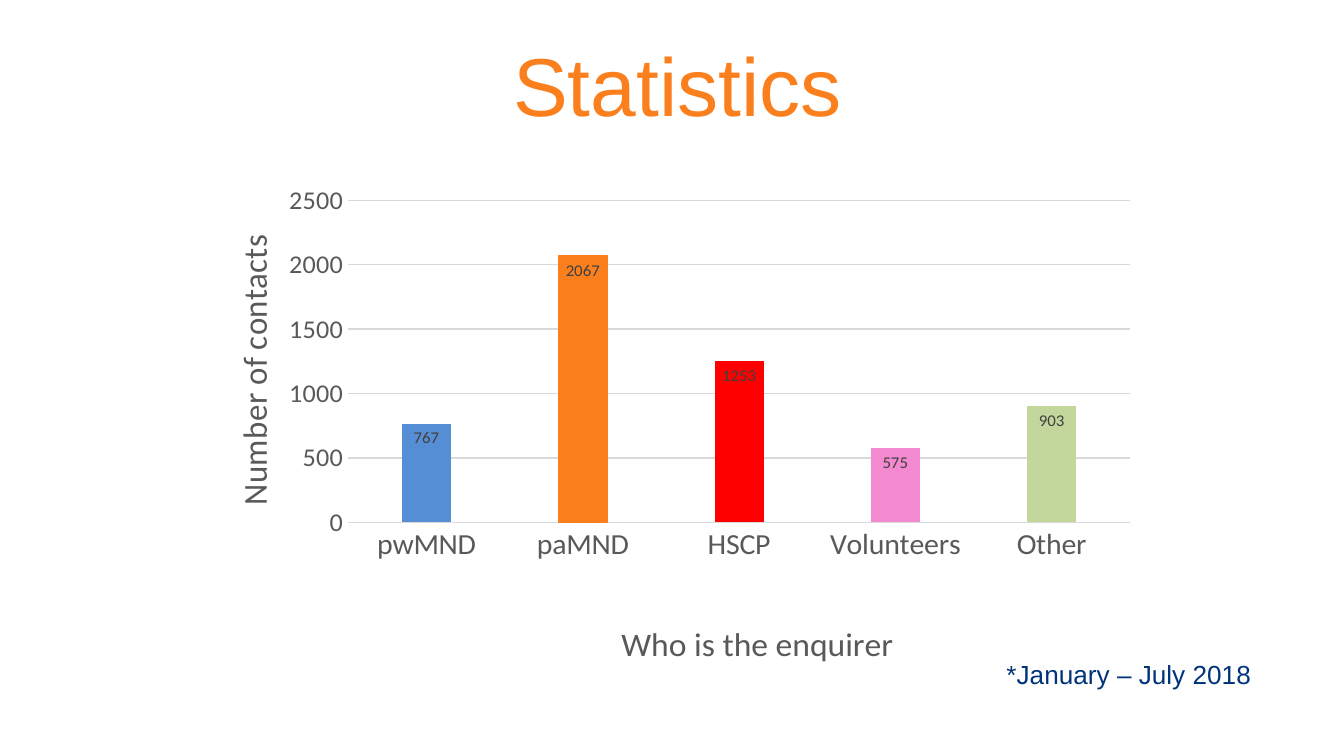
"""Build the Statistics slide with its chart of contacts by enquirer."""
from lxml.etree import SubElement
from pptx import Presentation
from pptx.chart.data import CategoryChartData
from pptx.dml.color import RGBColor
from pptx.enum.chart import XL_CHART_TYPE as ChartType
from pptx.enum.chart import XL_LABEL_POSITION as LabelPosition
from pptx.enum.chart import XL_TICK_MARK as TickMark
from pptx.enum.text import MSO_ANCHOR as Anchor
from pptx.enum.text import MSO_AUTO_SIZE as AutoSize
from pptx.enum.text import PP_ALIGN as Align
from pptx.oxml.ns import qn
from pptx.util import Pt

ORANGE = RGBColor(0xFB, 0x7F, 0x1D)
BLUE = RGBColor(0x55, 0x8E, 0xD5)
RED = RGBColor(0xFF, 0x00, 0x00)
PINK = RGBColor(0xF3, 0x89, 0xD0)
GREEN = RGBColor(0xC3, 0xD6, 0x9B)
NAVY = RGBColor(0x00, 0x34, 0x7A)
GREY = RGBColor(0x59, 0x59, 0x59)
DARK = RGBColor(0x40, 0x40, 0x40)
PALE = RGBColor(0xD9, 0xD9, 0xD9)
BLACK = RGBColor(0x00, 0x00, 0x00)

CONTACTS = [
    ("pwMND", 767, BLUE),
    ("paMND", 2067, ORANGE),
    ("HSCP", 1253, RED),
    ("Volunteers", 575, PINK),
    ("Other", 903, GREEN),
]


def set_font(font, name, size, color):
    font.name = name
    font.size = Pt(size)
    font.bold = False
    font.color.rgb = color


def set_line(line, color):
    line.color.rgb = color
    line.width = Pt(0.75)


def write(shape, text, size, color, align):
    frame = shape.text_frame
    frame.word_wrap = True
    frame.auto_size = AutoSize.NONE
    frame.vertical_anchor = Anchor.TOP
    para = frame.paragraphs[0]
    para.text = text
    para.alignment = align
    set_font(para.font, "Arial", size, color)


def place_part(part, index, **fractions):
    for old in part.findall(qn("c:layout")):
        part.remove(old)
    layout = part.makeelement(qn("c:layout"))
    part.insert(index, layout)
    manual = SubElement(layout, qn("c:manualLayout"))
    if "w" in fractions:
        SubElement(manual, qn("c:layoutTarget")).set("val", "inner")
    for mode in ("xMode", "yMode"):
        SubElement(manual, qn(f"c:{mode}")).set("val", "edge")
    for name, value in fractions.items():
        SubElement(manual, qn(f"c:{name}")).set("val", str(value))


def style_axis(axis, title, size, x, y, rotation):
    axis.major_tick_mark = axis.minor_tick_mark = TickMark.NONE
    set_font(axis.tick_labels.font, "Calibri", size, GREY)
    frame = axis.axis_title.text_frame
    frame.text = title
    set_font(frame.paragraphs[0].font, "Calibri", 18, GREY)
    body = frame._txBody.find(qn("a:bodyPr"))
    body.set("rot", str(rotation * 60000))
    body.set("vert", "horz")
    place_part(axis.axis_title._element, 1, x=x, y=y)


def style_bars(plot):
    plot.gap_width = 219
    plot.overlap = -27
    plot.vary_by_categories = False
    series = plot.series[0]
    for index, (_, _, color) in enumerate(CONTACTS):
        bar = series.points[index].format
        bar.fill.solid()
        bar.fill.fore_color.rgb = color
        if color == ORANGE:
            set_line(bar.line, ORANGE)
        else:
            bar.line.fill.background()
    labels = series.data_labels
    labels.show_value = True
    labels.position = LabelPosition.INSIDE_END
    set_font(labels.font, "Calibri", 9, DARK)


def add_contacts_chart(page):
    data = CategoryChartData()
    data.categories = [name for name, _, _ in CONTACTS]
    data.add_series("Series 1", [count for _, count, _ in CONTACTS])
    chart = page.shapes.add_chart(
        ChartType.COLUMN_CLUSTERED, Pt(105), Pt(94.3), Pt(510.5), Pt(267.1), data
    ).chart
    chart.has_legend = False
    chart.has_title = False
    set_font(chart.font, "Calibri", 10, BLACK)
    style_bars(chart.plots[0])

    enquirers, counts = chart.category_axis, chart.value_axis
    style_axis(enquirers, "Who is the enquirer", 16, 0.44, 0.9, 0)
    set_line(enquirers.format.line, PALE)
    style_axis(counts, "Number of contacts", 14, 0.03, 0.12, -90)
    counts.format.line.fill.background()
    counts.minimum_scale, counts.maximum_scale = 0, 2500
    counts.major_unit = 500
    set_line(counts.major_gridlines.format.line, PALE)
    plot_area = chart._chartSpace.find(".//" + qn("c:plotArea"))
    place_part(plot_area, 0, x=0.16, y=0.05, w=0.82, h=0.66)


def main():
    deck = Presentation()
    deck.slide_width, deck.slide_height = Pt(720), Pt(405)
    page = deck.slides.add_slide(deck.slide_layouts[5])

    title = page.shapes.title
    title.left, title.top, title.width, title.height = Pt(57), Pt(15), Pt(612), Pt(87)
    write(title, "Statistics", 44, ORANGE, Align.CENTER)

    add_contacts_chart(page)

    period = page.shapes.add_textbox(Pt(513.4), Pt(349.2), Pt(164), Pt(24.5))
    write(period, "*January – July 2018", 14, NAVY, Align.RIGHT)
    deck.save("out.pptx")


if __name__ == "__main__":
    main()
